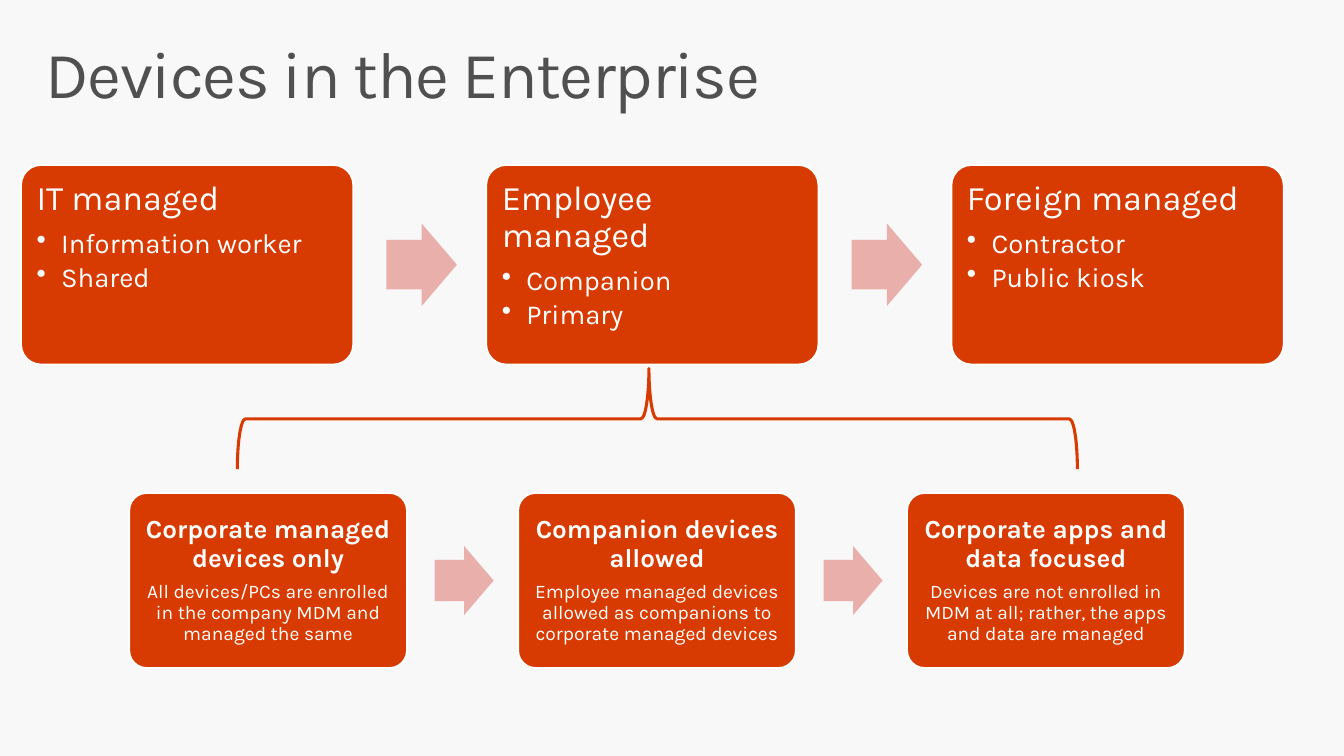
from lxml.etree import SubElement
from pptx import Presentation
from pptx.dml.color import RGBColor
from pptx.enum.shapes import MSO_SHAPE
from pptx.enum.text import MSO_ANCHOR, MSO_AUTO_SIZE, PP_ALIGN
from pptx.oxml.ns import qn
from pptx.util import Cm, Pt

FONT = "Karla"
ORANGE, PINK, WHITE, GREY, PAPER = "D83B01", "E9AFAB", "FFFFFF", "505050", "F8F8F8"

OWNERS = [
    ("IT managed", ["Information worker", "Shared"]),
    ("Employee managed", ["Companion", "Primary"]),
    ("Foreign managed", ["Contractor", "Public kiosk"]),
]
POLICIES = [
    ("Corporate managed devices only",
     ["All devices/PCs are enrolled in the company MDM and managed the same"]),
    ("Companion devices allowed",
     ["Employee managed devices allowed as companions to corporate managed devices"]),
    ("Corporate apps and data focused",
     ["Devices are not enrolled in MDM at all; rather, the apps and data are managed"]),
]
OWNER_STYLE = {
    "frame": {"vertical_anchor": MSO_ANCHOR.TOP}, "inset": 0.25, "bulleted": True,
    "align": PP_ALIGN.LEFT,
    "heading": {"size": Pt(25), "bold": False}, "heading_after": 8.75,
    "detail": {"size": Pt(20), "bold": False}, "detail_after": 3.5,
}
POLICY_STYLE = {
    "frame": {"vertical_anchor": MSO_ANCHOR.MIDDLE}, "inset": 0.2, "bulleted": False,
    "align": PP_ALIGN.CENTER,
    "heading": {"size": Pt(19), "bold": True}, "heading_after": 7,
    "detail": {"size": Pt(14), "bold": False}, "detail_after": 5,
}


def colour(hex_code):
    """Turn a hex string into a colour."""
    return RGBColor.from_string(hex_code)


def apply(target, values):
    """Set every attribute named in values on target."""
    for name, value in values.items():
        setattr(target, name, value)


def set_insets(frame, sides, ends):
    """Set the text margins in centimetres."""
    apply(frame, {"margin_left": Cm(sides), "margin_right": Cm(sides),
                  "margin_top": Cm(ends), "margin_bottom": Cm(ends)})


def write(paragraph, text, font, ink, **layout):
    """Fill a paragraph with one formatted run and return the run."""
    apply(paragraph, {"line_spacing": 0.9, **layout})
    run = paragraph.add_run()
    run.text = text
    apply(run.font, {"name": FONT, **font})
    run.font.color.rgb = colour(ink)
    return run


def add_bullet(paragraph):
    """Give a paragraph a hanging round bullet."""
    paragraph.level = 1
    properties = paragraph._p.get_or_add_pPr()
    properties.set("marL", str(Cm(0.63)))
    properties.set("indent", str(-Cm(0.63)))
    SubElement(properties, qn("a:buChar")).set("char", "•")


def add_figure(slide, preset, box, adjustments, fill=None, line=None, weight=0):
    """Add a flat preset shape in a box given in centimetres."""
    figure = slide.shapes.add_shape(preset, *map(Cm, box))
    figure.shadow.inherit = False
    for index, value in enumerate(adjustments):
        figure.adjustments[index] = value
    if fill:
        figure.fill.solid()
        figure.fill.fore_color.rgb = colour(fill)
    else:
        figure.fill.background()
    if line:
        figure.line.color.rgb = colour(line)
        figure.line.width = Pt(weight)
    else:
        figure.line.fill.background()
    return figure


def add_title(slide, box, text):
    """Place and format the slide title."""
    title = slide.shapes.title
    apply(title, dict(zip(("left", "top", "width", "height"), map(Cm, box))))
    frame = title.text_frame
    apply(frame, {"vertical_anchor": MSO_ANCHOR.TOP, "word_wrap": True,
                  "auto_size": MSO_AUTO_SIZE.NONE})
    set_insets(frame, 0.41, 0.25)
    run = write(frame.paragraphs[0], text, {"size": Pt(48)}, GREY,
                alignment=PP_ALIGN.LEFT)
    run.font._element.set("spc", "-100")


def add_card(slide, box, heading, details, style):
    """Add a rounded card with a heading and its details."""
    card = add_figure(slide, MSO_SHAPE.ROUNDED_RECTANGLE, box, [0.1], ORANGE, WHITE, 1.35)
    frame = card.text_frame
    apply(frame, {"word_wrap": True, **style["frame"]})
    set_insets(frame, style["inset"], style["inset"])
    write(frame.paragraphs[0], heading, style["heading"], WHITE,
          alignment=style["align"], space_after=Pt(style["heading_after"]))
    for detail in details:
        paragraph = frame.add_paragraph()
        write(paragraph, detail, style["detail"], WHITE,
              alignment=style["align"], space_after=Pt(style["detail_after"]))
        if style["bulleted"]:
            add_bullet(paragraph)


def add_process(slide, box, steps, style):
    """Spread cards over a box, with an arrow in each gap."""
    left, top, width, height = box
    card_width = width / (1.4 * len(steps) - 0.4)
    arrow_width, arrow_height = 0.212 * card_width, 0.248 * card_width
    for index, (heading, details) in enumerate(steps):
        card_left = left + 1.4 * card_width * index
        if index:
            arrow_box = (card_left - 0.3 * card_width, top + (height - arrow_height) / 2,
                         arrow_width, arrow_height)
            add_figure(slide, MSO_SHAPE.RIGHT_ARROW, arrow_box, [0.6, 0.5], PINK)
        add_card(slide, (card_left, top, card_width, height), heading, details, style)


def add_brace(slide, box):
    """Add a brace that fills the box and points up."""
    left, top, width, height = box
    turned_box = (left + (width - height) / 2, top + (height - width) / 2, height, width)
    brace = add_figure(slide, MSO_SHAPE.RIGHT_BRACE, turned_box, [0.08, 0.49],
                       line=ORANGE, weight=2.25)
    brace.rotation = 270


def main():
    """Build the slide and save it."""
    deck = Presentation()
    apply(deck, {"slide_width": Cm(34.54), "slide_height": Cm(19.43)})
    slide = deck.slides.add_slide(deck.slide_layouts[5])
    slide.background.fill.solid()
    slide.background.fill.fore_color.rgb = colour(PAPER)
    add_title(slide, (0.76, 0.81, 33.02, 2.54), "Devices in the Enterprise")
    add_process(slide, (0.54, 4.24, 32.45, 5.13), OWNERS, OWNER_STYLE)
    add_process(slide, (3.32, 12.67, 27.13, 4.5), POLICIES, POLICY_STYLE)
    add_brace(slide, (6.1, 9.47, 21.59, 2.59))
    deck.save("out.pptx")


if __name__ == "__main__":
    main()
